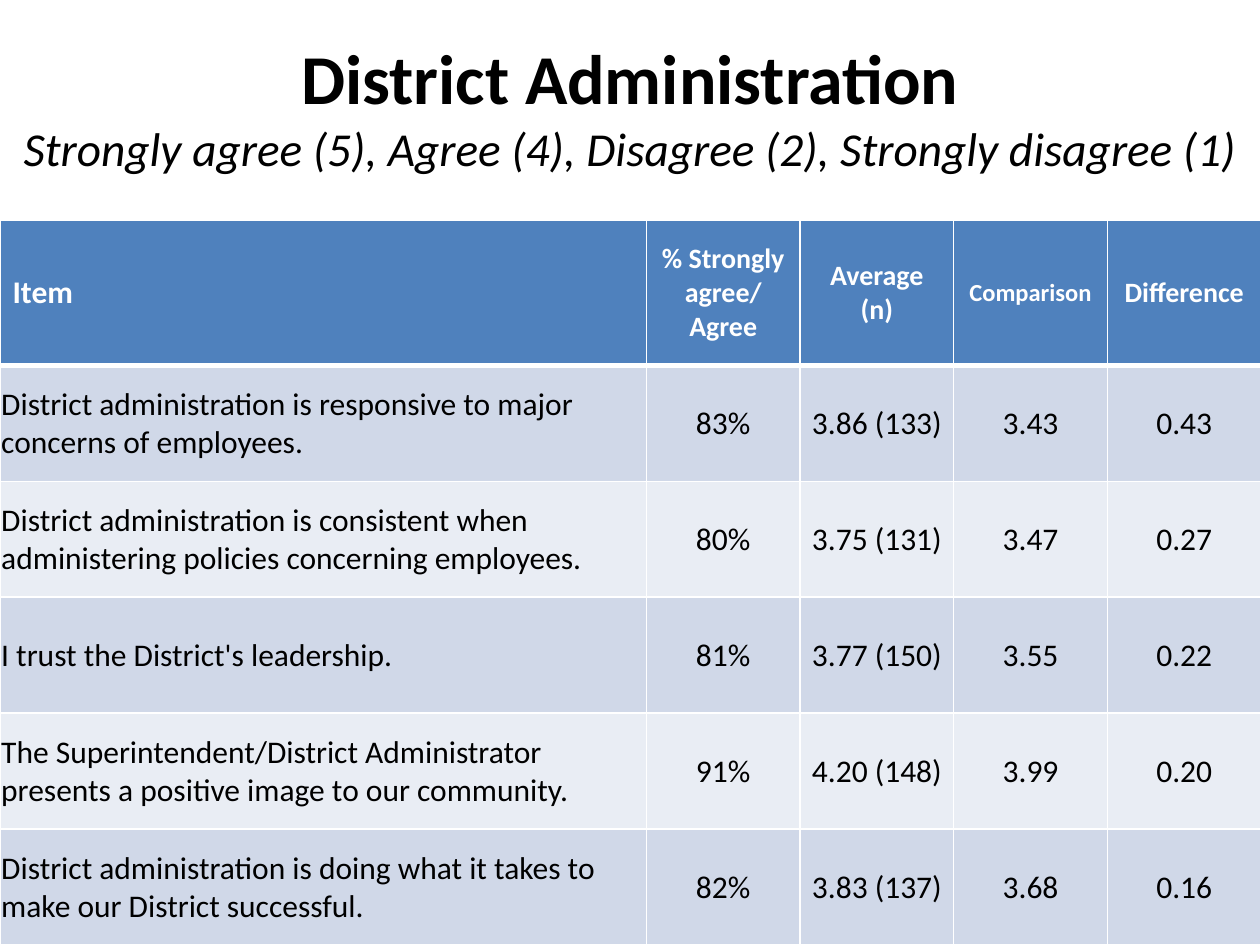
from dataclasses import dataclass

from lxml import etree
from pptx import Presentation
from pptx.dml.color import RGBColor
from pptx.enum.text import MSO_ANCHOR, PP_ALIGN
from pptx.oxml.ns import qn
from pptx.util import Inches, Pt

MIDDLE = MSO_ANCHOR.MIDDLE
LEFT, CENTER = PP_ALIGN.LEFT, PP_ALIGN.CENTER
BLANK_LAYOUT = 6


@dataclass(frozen=True)
class Theme:
    font: str = "Calibri"
    text: str = "000000"
    header_text: str = "FFFFFF"
    header_fill: str = "4F81BD"
    bands: tuple = ("D0D8E8", "E9EDF4")
    border: str = "FFFFFF"
    title_size: int = 40
    scale_size: int = 27
    body_size: int = 18
    header_sizes: tuple = (18, 16, 16, 14, 16)
    border_width: int = 1
    header_rule_width: int = 3


TITLE = "District Administration"
SCALE = "Strongly agree (5), Agree (4), Disagree (2), Strongly disagree (1)"
HEADERS = ("Item", "% Strongly agree/ Agree", "Average (n)", "Comparison", "Difference")
RESULTS = (
    ("District administration is responsive to major concerns of employees.",
     "83%", "3.86 (133)", "3.43", "0.43"),
    ("District administration is consistent when administering policies concerning employees.",
     "80%", "3.75 (131)", "3.47", "0.27"),
    ("I trust the District's leadership.",
     "81%", "3.77 (150)", "3.55", "0.22"),
    ("The Superintendent/District Administrator presents a positive image to our community.",
     "91%", "4.20 (148)", "3.99", "0.20"),
    ("District administration is doing what it takes to make our District successful.",
     "82%", "3.83 (137)", "3.68", "0.16"),
)


class SlideBuilder:
    def __init__(self, slide, theme):
        self.slide = slide
        self.theme = theme

    def span(self, para, text, size, color, bold=False, italic=False):
        run = para.add_run()
        run.text = text
        font = run.font
        font.name, font.size = self.theme.font, Pt(size)
        font.bold, font.italic = bold, italic
        font.color.rgb = RGBColor.from_string(color)

    def title(self, heading, scale):
        theme = self.theme
        box = self.slide.shapes.add_textbox(0, 0, Inches(10), Inches(1.67))
        frame = box.text_frame
        frame.word_wrap = True
        frame.vertical_anchor = MIDDLE
        para = frame.paragraphs[0]
        para.alignment = CENTER
        self.span(para, heading, theme.title_size, theme.text, bold=True)
        para.add_line_break()
        self.span(para, scale, theme.scale_size, theme.text, italic=True)

    def borders(self, cell, top, bottom):
        """Draw all four cell edges; top and bottom are widths in points."""
        properties = cell._tc.get_or_add_tcPr()
        side = self.theme.border_width
        for tag, width in (("a:lnL", side), ("a:lnR", side), ("a:lnT", top), ("a:lnB", bottom)):
            line = etree.SubElement(properties, qn(tag), w=str(Pt(width)))
            fill = etree.SubElement(line, qn("a:solidFill"))
            etree.SubElement(fill, qn("a:srgbClr"), val=self.theme.border)

    def cell(self, cell, text, column, row):
        theme = self.theme
        header = row == 0
        thin, thick = theme.border_width, theme.header_rule_width
        self.borders(cell, thick if row == 1 else thin, thick if header else thin)
        cell.fill.solid()
        fill = theme.header_fill if header else theme.bands[(row - 1) % 2]
        cell.fill.fore_color.rgb = RGBColor.from_string(fill)
        cell.vertical_anchor = MIDDLE
        if not header:
            cell.margin_left = cell.margin_top = cell.margin_right = Inches(0.01)
            cell.margin_bottom = 0
        para = cell.text_frame.paragraphs[0]
        para.alignment = CENTER if column else LEFT
        size = theme.header_sizes[column] if header else theme.body_size
        self.span(para, text, size, theme.header_text if header else theme.text, bold=header)

    def table(self, headers, results):
        rows = (headers, *results)
        frame = self.slide.shapes.add_table(
            len(rows), len(headers), 0, Inches(1.75), Inches(10), Inches(5.75))
        table = frame.table
        for index, column in enumerate(table.columns):
            column.width = Inches(1.22 if index else 5.13)
        for index, row in enumerate(table.rows):
            row.height = Inches(0.92 if index else 1.15)
        for row, texts in enumerate(rows):
            for column, text in enumerate(texts):
                self.cell(table.cell(row, column), text, column, row)


def main():
    deck = Presentation()
    deck.slide_width, deck.slide_height = Inches(10), Inches(7.5)
    page = deck.slides.add_slide(deck.slide_layouts[BLANK_LAYOUT])
    builder = SlideBuilder(page, Theme())
    builder.title(TITLE, SCALE)
    builder.table(HEADERS, RESULTS)
    deck.save("out.pptx")


if __name__ == "__main__":
    main()
